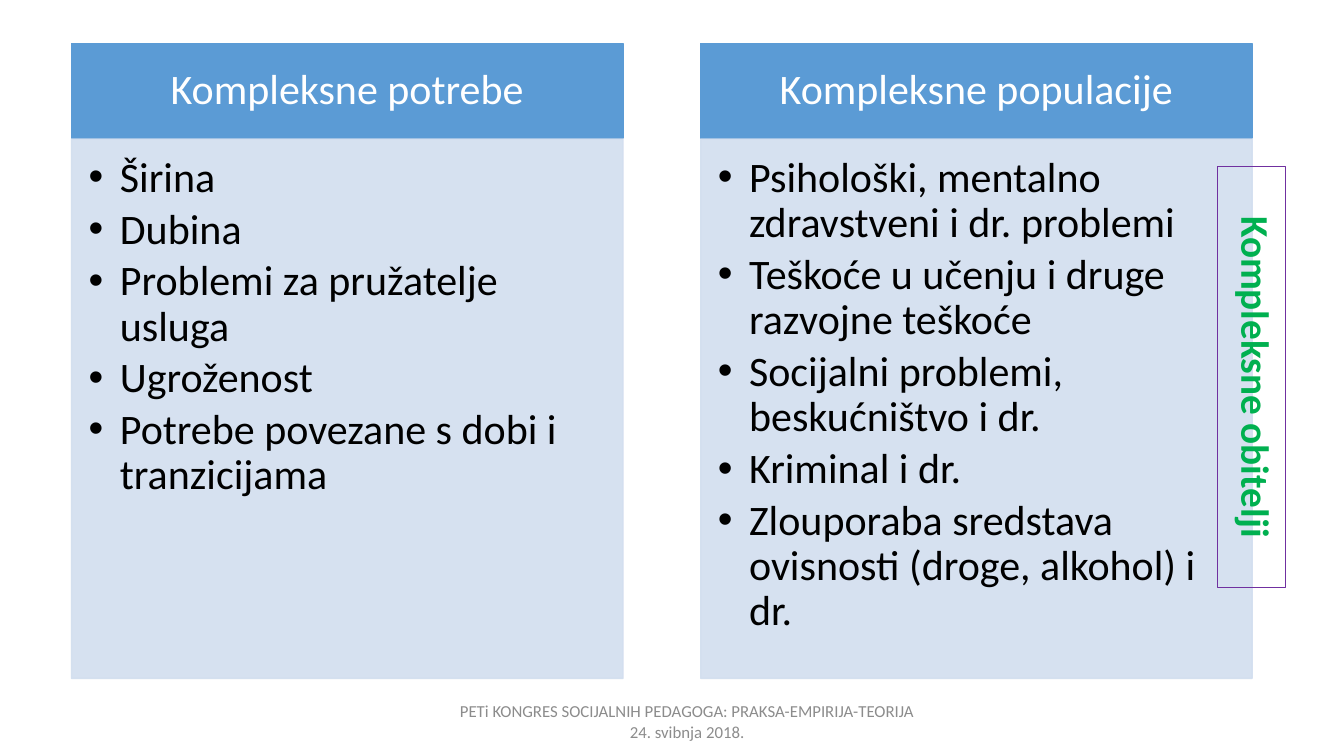
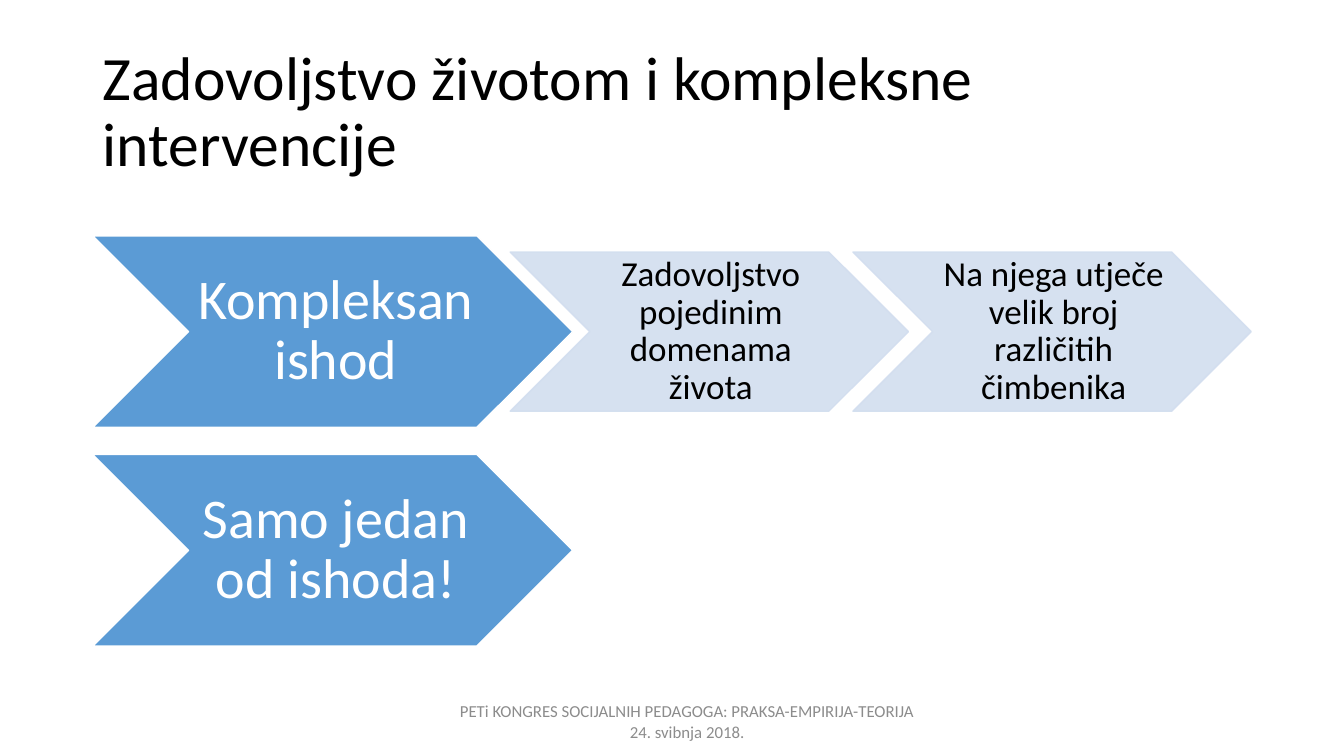
from lxml import etree
from pptx import Presentation
from pptx import util as u
from pptx.dml.color import RGBColor
from pptx.enum import shapes, text
from pptx.oxml.ns import qn

FONT = "Calibri"
BLUE, PALE, WHITE, BLACK = "5B9BD5", "D2DEEF", "FFFFFF", "000000"
GREY, GREEN, PURPLE = "8C8C8C", "00B050", "7030A0"
TOP, MID = text.MSO_ANCHOR.TOP, text.MSO_ANCHOR.MIDDLE
LEFT, MIDDLE = text.PP_ALIGN.LEFT, text.PP_ALIGN.CENTER
RECT, ARROW = shapes.MSO_SHAPE.RECTANGLE, shapes.MSO_SHAPE.CHEVRON
PAD = (0.1, 0.05, 0.1, 0.05)
FOOT = "PETi KONGRES SOCIJALNIH PEDAGOGA: PRAKSA-EMPIRIJA-TEORIJA 24. svibnja 2018."


def rgb(code):
    return RGBColor.from_string(code)


def fade(fill):
    """Make a solid fill 90 % opaque."""
    tint = fill._xPr.find(".//" + qn("a:srgbClr"))
    etree.SubElement(tint, qn("a:alpha")).set("val", "90000")


def bullet(para):
    props = para._p.get_or_add_pPr()
    props.set("marL", str(u.Inches(0.31)))
    props.set("indent", str(u.Inches(-0.31)))
    etree.SubElement(props, qn("a:buFont")).set("typeface", "Arial")
    etree.SubElement(props, qn("a:buChar")).set("char", "•")


class Deck:
    def __init__(self):
        self.prs = Presentation()
        self.prs.slide_width = u.Inches(13.33)
        self.prs.slide_height = u.Inches(7.5)

    def page(self):
        """Start a slide with the shared footer."""
        self.slide = self.prs.slides.add_slide(self.prs.slide_layouts[6])
        self.label(FOOT, (4.42, 6.96, 4.79, 0.39), 12, GREY, MIDDLE, 1)

    def letter(self, shape, lines, size, color, align=MIDDLE, anchor=MID,
               pad=PAD, lead=0.9, bold=False, dots=False):
        """Put styled text into a shape, one paragraph a line."""
        frame = shape.text_frame
        frame.word_wrap = True
        frame.vertical_anchor = anchor
        (frame.margin_left, frame.margin_top,
         frame.margin_right, frame.margin_bottom) = map(u.Inches, pad)
        frame.text = "\n".join(lines)
        for para in frame.paragraphs:
            if dots:
                bullet(para)
                para.space_after = u.Pt(4.5)
            para.alignment = align
            para.line_spacing = lead
            for run in para.runs:
                run.font.name = FONT
                run.font.size = u.Pt(size)
                run.font.bold = bold
                run.font.color.rgb = rgb(color)

    def label(self, words, box, size, color, align, lead):
        shape = self.slide.shapes.add_textbox(*map(u.Inches, box))
        self.letter(shape, [words], size, color, align, lead=lead)

    def shape(self, kind, box, fill, line, width=1):
        shape = self.slide.shapes.add_shape(kind, *map(u.Inches, box))
        shape.shadow.inherit = False
        shape.line.color.rgb = rgb(line)
        shape.line.width = u.Pt(width)
        if fill:
            shape.fill.solid()
            shape.fill.fore_color.rgb = rgb(fill)
        else:
            shape.fill.background()
        if fill == PALE:
            fade(shape.fill)
        if line == PALE:
            fade(shape.line.fill)
        return shape

    def title(self, words):
        self.label(words, (0.92, 0.4, 11.5, 1.45), 44, BLACK, LEFT, 0.9)

    def panel(self, left, head, items):
        """Draw a heading band above a bulleted list."""
        band = self.shape(RECT, (left, 0.43, 5.47, 0.94), BLUE, BLUE)
        self.letter(band, [head], 30, WHITE, pad=(0.23, 0.13, 0.23, 0.13))
        body = self.shape(RECT, (left, 1.38, 5.47, 5.35), PALE, PALE)
        self.letter(body, items, 30, BLACK, LEFT, TOP,
                    (0.17, 0.17, 0.23, 0.26), dots=True)

    def side(self, words, box):
        """Draw an outlined box with text turned downwards."""
        shape = self.shape(RECT, box, None, PURPLE, 0.75)
        self.letter(shape, [words], 28, GREEN, anchor=TOP, lead=1, bold=True)
        shape.text_frame._txBody.bodyPr.set("vert", "vert")

    def lead(self, words, top):
        shape = self.shape(ARROW, (0.92, top, 4.76, 1.9), BLUE, WHITE)
        self.letter(shape, [words], 40, WHITE, pad=(0.06, 0.03, 0, 0.03))

    def step(self, words, left, top):
        shape = self.shape(ARROW, (left, top, 3.95, 1.58), PALE, PALE)
        self.letter(shape, [words], 25, BLACK, pad=(0.03, 0.02, 0, 0.02))


def needs(deck):
    deck.page()
    deck.panel(0.71, "Kompleksne potrebe", [
        "Širina",
        "Dubina",
        "Problemi za pružatelje usluga",
        "Ugroženost",
        "Potrebe povezane s dobi i tranzicijama",
    ])
    deck.panel(6.95, "Kompleksne populacije", [
        "Psihološki, mentalno zdravstveni i dr. problemi",
        "Teškoće u učenju i druge razvojne teškoće",
        "Socijalni problemi, beskućništvo i dr.",
        "Kriminal i dr.",
        "Zlouporaba sredstava ovisnosti (droge, alkohol) i dr.",
    ])
    deck.side("Kompleksne obitelji", (12.08, 1.65, 0.67, 4.18))


def outcomes(deck):
    deck.page()
    deck.title("Zadovoljstvo životom i kompleksne intervencije")
    rows = [
        ("Kompleksan ishod", ["Zadovoljstvo pojedinim domenama života",
                              "Na njega utječe velik broj različitih čimbenika"]),
        ("Samo jedan od ishoda!", []),
    ]
    for row, (head, steps) in enumerate(rows):
        top = 2.34 + 2.17 * row
        deck.lead(head, top)
        for col, words in enumerate(steps):
            deck.step(words, 5.06 + 3.4 * col, top + 0.16)


def main():
    deck = Deck()
    needs(deck)
    outcomes(deck)
    deck.prs.save("out.pptx")


if __name__ == "__main__":
    main()
